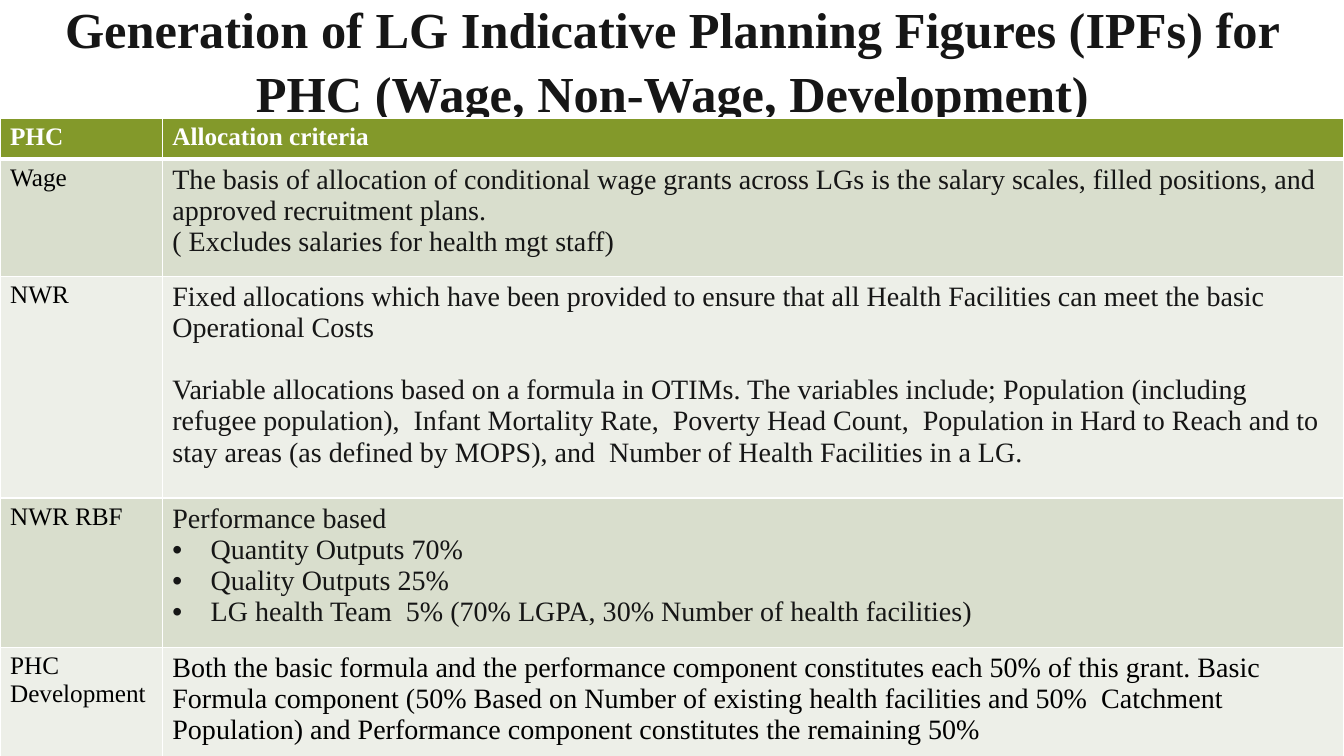
from dataclasses import dataclass

from lxml.etree import SubElement
from pptx import Presentation
from pptx.dml.color import RGBColor as Color
from pptx.enum.text import MSO_ANCHOR as Anchor, MSO_AUTO_SIZE as AutoSize, PP_ALIGN as Align
from pptx.oxml.ns import qn
from pptx.util import Inches, Pt


@dataclass(frozen=True)
class Theme:
    font: str = "Times New Roman"
    ink: str = "161616"
    black: str = "000000"
    white: str = "FFFFFF"
    header: str = "83992A"
    bands: tuple = ("D9DECD", "EDEFE8")
    title_size: int = 36
    label_size: int = 18
    body_size: int = 20


theme = Theme()


def write(paragraph, text, size=theme.body_size, color=theme.ink, bold=False,
          align=Align.LEFT, before=0, bullet=False):
    paragraph.alignment = align
    paragraph.space_before = Pt(before)
    if bullet:
        properties = paragraph._p.get_or_add_pPr()
        properties.set("marL", str(Inches(0.38)))
        properties.set("indent", str(Inches(-0.38)))
        SubElement(properties, qn("a:buFont"), typeface="Arial")
        SubElement(properties, qn("a:buChar"), char="•")
    run = paragraph.add_run()
    run.text = text
    run.font.name = theme.font
    run.font.size = Pt(size)
    run.font.bold = bold
    run.font.color.rgb = Color.from_string(color)


def style_cell(cell, fill, bottom):
    properties = cell._tc.get_or_add_tcPr()
    for side, width in (("L", 1), ("R", 1), ("T", 1), ("B", bottom)):
        line = SubElement(properties, qn(f"a:ln{side}"), w=str(Pt(width)))
        solid = SubElement(line, qn("a:solidFill"))
        SubElement(solid, qn("a:srgbClr"), val=theme.white)
    cell.fill.solid()
    cell.fill.fore_color.rgb = Color.from_string(fill)


presentation = Presentation()
presentation.slide_width = Inches(13.33)
presentation.slide_height = Inches(7.5)
slide = presentation.slides.add_slide(presentation.slide_layouts[5])

title_height = Inches(1.17)
title = slide.shapes.title
title.left, title.top = Inches(0.24), 0
title.width, title.height = Inches(12.86), title_height
title.text_frame.word_wrap = True
title.text_frame.auto_size = AutoSize.NONE
title.text_frame.vertical_anchor = Anchor.MIDDLE
heading = title.text_frame.paragraphs[0]
heading.line_spacing = 1.06
write(heading, "Generation of LG Indicative Planning Figures (IPFs) for PHC (Wage, Non-Wage, Development)",
      size=theme.title_size, bold=True, align=Align.CENTER)

plain, gap, bullet = {}, {"before": 22.5}, {"bullet": True}
criteria = [
    ("Wage", 1.16, [
        ("The basis of allocation of conditional wage grants across LGs is the salary scales, "
         "filled positions, and approved recruitment plans.", plain),
        ("( Excludes salaries for health mgt staff)", plain),
    ]),
    ("NWR", 2.2, [
        ("Fixed allocations which have been provided to ensure that all Health Facilities "
         "can meet the basic Operational Costs", plain),
        ("Variable allocations based on a formula in OTIMs. The variables include; Population "
         "(including refugee population),  Infant Mortality Rate,  Poverty Head Count,  "
         "Population in Hard to Reach and to stay areas (as defined by MOPS), and  "
         "Number of Health Facilities in a LG.", gap),
    ]),
    ("NWR RBF", 1.48, [
        ("Performance based", plain),
        ("Quantity Outputs 70%", bullet),
        ("Quality Outputs 25%", bullet),
        ("LG health Team  5% (70% LGPA, 30% Number of health facilities)", bullet),
    ]),
    ("PHC Development", 1.1, [
        ("Both the basic formula and the performance component constitutes each 50% of this grant. "
         "Basic Formula component (50% Based on Number of existing health facilities and 50%  "
         "Catchment Population) and Performance component constitutes the remaining 50%",
         {"color": theme.black}),
    ]),
]

table = slide.shapes.add_table(len(criteria) + 1, 2, 0, title_height,
                               presentation.slide_width, Inches(6.35)).table
table.columns[0].width = Inches(1.61)
table.columns[1].width = presentation.slide_width - Inches(1.61)

table.rows[0].height = Inches(0.41)
for cell, text in zip(table.rows[0].cells, ("PHC", "Allocation criteria")):
    style_cell(cell, theme.header, bottom=3)
    write(cell.text_frame.paragraphs[0], text, size=theme.label_size, color=theme.white, bold=True)

for index, (label, height, lines) in enumerate(criteria):
    row = table.rows[index + 1]
    row.height = Inches(height)
    for cell in row.cells:
        style_cell(cell, theme.bands[index % 2], bottom=1)
    label_cell, text_cell = row.cells
    write(label_cell.text_frame.paragraphs[0], label, size=theme.label_size, color=theme.black)
    frame = text_cell.text_frame
    for number, (text, options) in enumerate(lines):
        paragraph = frame.add_paragraph() if number else frame.paragraphs[0]
        write(paragraph, text, **options)

presentation.save("out.pptx")
